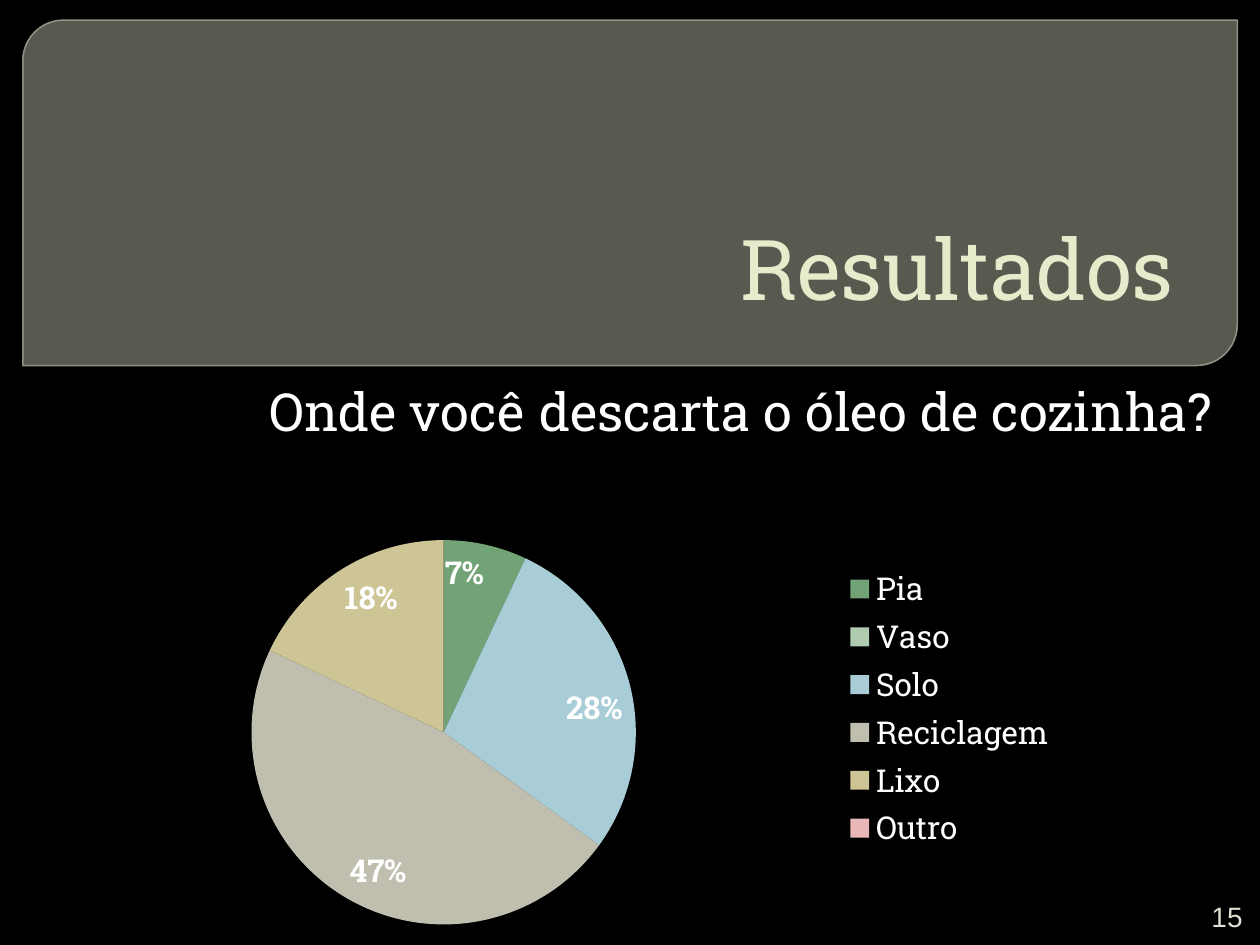
from lxml import etree
from pptx import Presentation
from pptx.chart.data import CategoryChartData
from pptx.dml.color import RGBColor
from pptx.enum.chart import XL_CHART_TYPE, XL_LABEL_POSITION, XL_LEGEND_POSITION
from pptx.enum.shapes import MSO_SHAPE
from pptx.enum.text import MSO_ANCHOR, MSO_AUTO_SIZE, PP_ALIGN
from pptx.oxml import parse_xml
from pptx.oxml.ns import nsdecls, qn
from pptx.util import Pt

PIE = XL_CHART_TYPE.PIE
INSIDE, OUTSIDE = XL_LABEL_POSITION.INSIDE_END, XL_LABEL_POSITION.OUTSIDE_END
LEGEND_RIGHT = XL_LEGEND_POSITION.RIGHT
PANEL = MSO_SHAPE.ROUND_2_DIAG_RECTANGLE
TOP, MIDDLE, BOTTOM = MSO_ANCHOR.TOP, MSO_ANCHOR.MIDDLE, MSO_ANCHOR.BOTTOM
FIXED = MSO_AUTO_SIZE.NONE
RIGHT = PP_ALIGN.RIGHT

COLORS = {
    "background": "000000", "panel": "888B7B", "panel line": "9DA090",
    "title": "E7EACB", "text": "FFFFFF", "number": "E0E0D4",
    "Pia": "72A376", "Vaso": "B0CCB0", "Solo": "A8CDD7",
    "Reciclagem": "C0BEAF", "Lixo": "CEC597", "Outro": "E8B7B7",
}
ANSWERS = {"Pia": 7, "Vaso": 0, "Solo": 28, "Reciclagem": 47, "Lixo": 18, "Outro": 0}
SLAB = "Roboto Slab"


def format_font(font, color, **values):
    for name, value in values.items():
        setattr(font, name, value)
    font.color.rgb = RGBColor.from_string(COLORS[color])


def set_layout(element, x, y, w, h, target=""):
    for old in element.findall(qn("c:layout")):
        element.remove(old)
    sizes = "".join(f'<c:{key} val="{value}"/>' for key, value in zip("xywh", (x, y, w, h)))
    layout = parse_xml(
        f'<c:layout {nsdecls("c")}><c:manualLayout>{target}'
        f'<c:xMode val="edge"/><c:yMode val="edge"/>{sizes}</c:manualLayout></c:layout>')
    position = element.find(qn("c:legendPos"))
    if position is None:
        element.insert(0, layout)
    else:
        position.addnext(layout)


deck = Presentation()
deck.slide_width, deck.slide_height = Pt(720), Pt(540)
page = deck.slides.add_slide(deck.slide_layouts[5])
page.background.fill.solid()
page.background.fill.fore_color.rgb = RGBColor.from_string(COLORS["background"])

panel = page.shapes.add_shape(PANEL, Pt(13), Pt(11.5), Pt(694), Pt(197.4))
panel.shadow.inherit = False
panel.adjustments[0], panel.adjustments[1] = 0.118, 0
panel.fill.solid()
panel.fill.fore_color.rgb = RGBColor.from_string(COLORS["panel"])
panel.line.color.rgb = RGBColor.from_string(COLORS["panel line"])
panel.line.width = Pt(0.87)
solid_fills = panel.element.spPr.iter(qn("a:solidFill"))
for solid, opacity in zip(solid_fills, (65, 88)):
    etree.SubElement(solid[0], qn("a:alpha"), val=str(opacity * 1000))

title = page.shapes.title
panel.element.addnext(title.element)
number = page.shapes.add_textbox(0, 0, 0, 0)
question = page.shapes.add_textbox(0, 0, 0, 0)
texts = [
    (title, "Resultados", (45.4, 111.6, 643.7, 73.4), BOTTOM, (3.6, 18), "title", SLAB, 48),
    (number, "15", (680.4, 512.6, 36.7, 21.6), MIDDLE, (7.2, 7.2), "number", "Arial", 16),
    (question, "Onde você descarta o óleo de cozinha?", (64.8, 213.1, 635.8, 43.9), TOP,
     (7.2, 7.2), "text", SLAB, 30),
]
for box, words, place, anchor, insets, color, face, size in texts:
    box.left, box.top, box.width, box.height = map(Pt, place)
    frame = box.text_frame
    frame.text = words
    frame.word_wrap = True
    frame.auto_size = FIXED
    frame.vertical_anchor = anchor
    frame.margin_left, frame.margin_right = map(Pt, insets)
    frame.margin_top = frame.margin_bottom = Pt(3.6)
    para = frame.paragraphs[0]
    para.alignment = RIGHT
    format_font(para.runs[0].font, color, name=face, size=Pt(size))

data = CategoryChartData()
data.categories = list(ANSWERS)
data.add_series("Series 1", list(ANSWERS.values()))
chart = page.shapes.add_chart(PIE, Pt(31), Pt(270), Pt(578), Pt(270), data).chart
chart.has_title = False
format_font(chart.font, "text", name=SLAB, size=Pt(10))
chart.has_legend = True
chart.legend.position = LEGEND_RIGHT
chart.legend.include_in_layout = False
format_font(chart.legend.font, "text", name=SLAB, size=Pt(18))
set_layout(chart.legend.font and chart.element.find(".//" + qn("c:legend")), 0.78, 0.19, 0.21, 0.62)
set_layout(chart.element.find(".//" + qn("c:plotArea")), 0.195, 0.14, 0.38, 0.82,
           '<c:layoutTarget val="inner"/>')

plot = chart.plots[0]
plot.vary_by_categories = True
series = plot.series[0]
labels = series.data_labels
labels.show_value, labels.show_percentage = False, True
labels.number_format, labels.number_format_is_linked = "0%", False
labels.position = INSIDE
format_font(labels.font, "text", name=SLAB, size=Pt(18), bold=True)
for index, answer in enumerate(ANSWERS):
    fill = series.points[index].format.fill
    fill.solid()
    fill.fore_color.rgb = RGBColor.from_string(COLORS[answer])

for index, answer in enumerate(ANSWERS):
    if ANSWERS[answer] == 0:
        label = series.points[index].data_label
        format_font(label.font, "text", name=SLAB, size=Pt(18), bold=True)
        label.position = OUTSIDE
hidden, shown = chart.element.iter(qn("c:dLbl"))
for child in list(hidden)[1:]:
    hidden.remove(child)
etree.SubElement(hidden, qn("c:delete"), val="1")
shown.find(qn("c:showVal")).set("val", "0")
shown.find(qn("c:showPercent")).set("val", "1")

deck.save("out.pptx")
